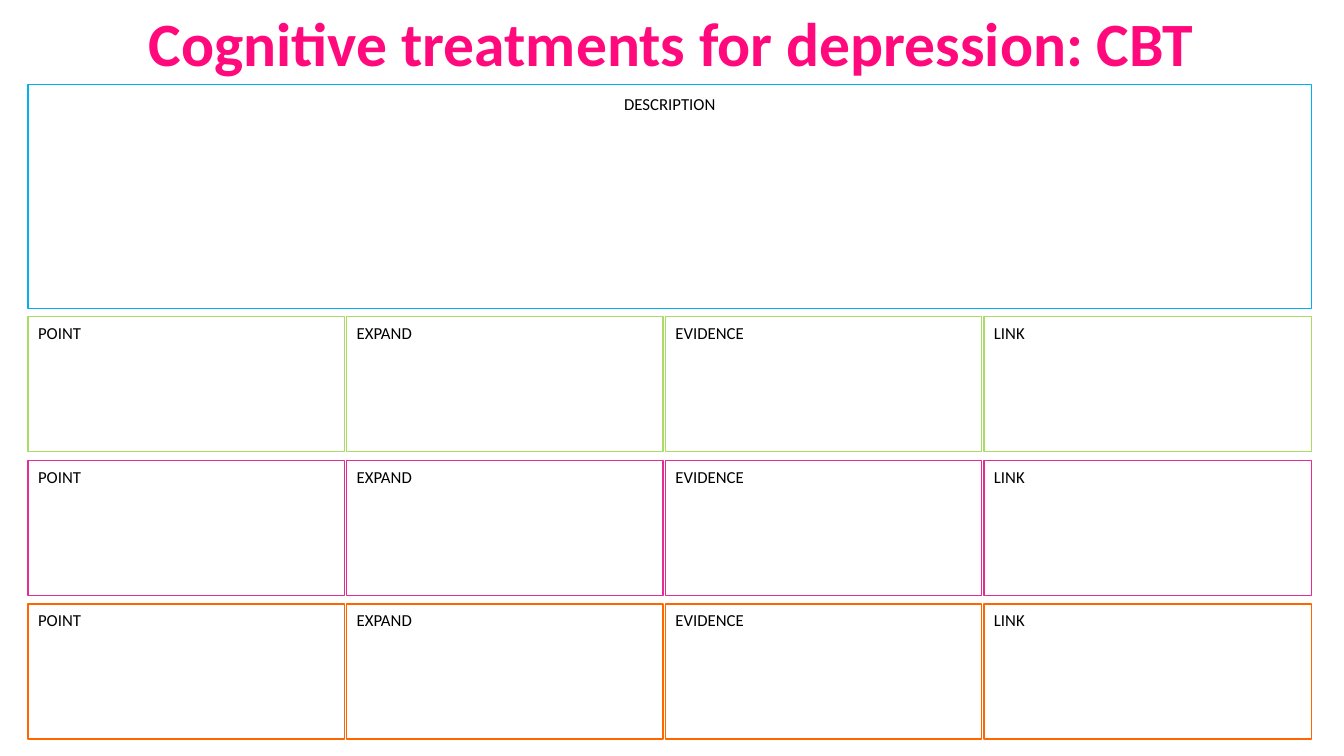
from pptx import Presentation
from pptx.dml.color import RGBColor
from pptx.enum.shapes import MSO_SHAPE
from pptx.enum.text import MSO_ANCHOR, PP_ALIGN
from pptx.util import Cm, Pt

TITLE = "Cognitive treatments for depression: CBT"
DESCRIPTION = "DESCRIPTION"
HEADINGS = ["POINT", "EXPAND", "EVIDENCE", "LINK"]
ROW_COLOURS = ["A9DB66", "E32D91", "FF6600"]

PAGE_WIDTH, PAGE_HEIGHT = 33.87, 19.05
LEFT, RIGHT = 0.71, 33.05
TITLE_HEIGHT = 2.13
DESCRIPTION_HEIGHT = 5.64
GRID_TOP, ROW_PITCH, ROW_HEIGHT = 7.98, 3.62, 3.4
COLUMN_PITCH, COLUMN_GAP = 8.03, 0.06

TITLE_FONT = {"name": "Calibri", "size": Pt(44), "bold": True}
LABEL_FONT = {"name": "Calibri", "size": Pt(12), "bold": False}


def colour(value):
    return RGBColor.from_string(value)


def write(box, text, font, text_colour, align, top_margin):
    frame = box.text_frame
    layout = {"word_wrap": True, "vertical_anchor": MSO_ANCHOR.TOP,
              "margin_top": Cm(top_margin)}
    for name, value in layout.items():
        setattr(frame, name, value)
    para = frame.paragraphs[0]
    para.alignment = align
    span = para.add_run()
    span.text = text
    for name, value in font.items():
        setattr(span.font, name, value)
    span.font.color.rgb = colour(text_colour)


def add_panel(page, text, place, outline, align, top_margin):
    box = page.shapes.add_shape(MSO_SHAPE.RECTANGLE, *map(Cm, place))
    box.shadow.inherit = False
    box.fill.solid()
    box.fill.fore_color.rgb = colour("FFFFFF")
    box.line.color.rgb = colour(outline)
    box.line.width = Pt(1)
    write(box, text, LABEL_FONT, "000000", align, top_margin)


def main():
    deck = Presentation()
    deck.slide_width, deck.slide_height = Cm(PAGE_WIDTH), Cm(PAGE_HEIGHT)
    page = deck.slides.add_slide(deck.slide_layouts[6])

    for row, outline in enumerate(ROW_COLOURS):
        top = GRID_TOP + row * ROW_PITCH
        for column, heading in enumerate(HEADINGS):
            left = LEFT + column * COLUMN_PITCH
            is_last = column == len(HEADINGS) - 1
            width = RIGHT - left if is_last else COLUMN_PITCH - COLUMN_GAP
            add_panel(page, heading, (left, top, width, ROW_HEIGHT),
                      outline, PP_ALIGN.LEFT, 0.15)

    add_panel(page, DESCRIPTION,
              (LEFT, TITLE_HEIGHT, RIGHT - LEFT, DESCRIPTION_HEIGHT),
              "00B0F0", PP_ALIGN.CENTER, 0.24)

    title = page.shapes.add_textbox(0, 0, Cm(PAGE_WIDTH), Cm(TITLE_HEIGHT))
    write(title, TITLE, TITLE_FONT, "FF097C", PP_ALIGN.CENTER, 0.13)

    deck.save("out.pptx")


if __name__ == "__main__":
    main()
